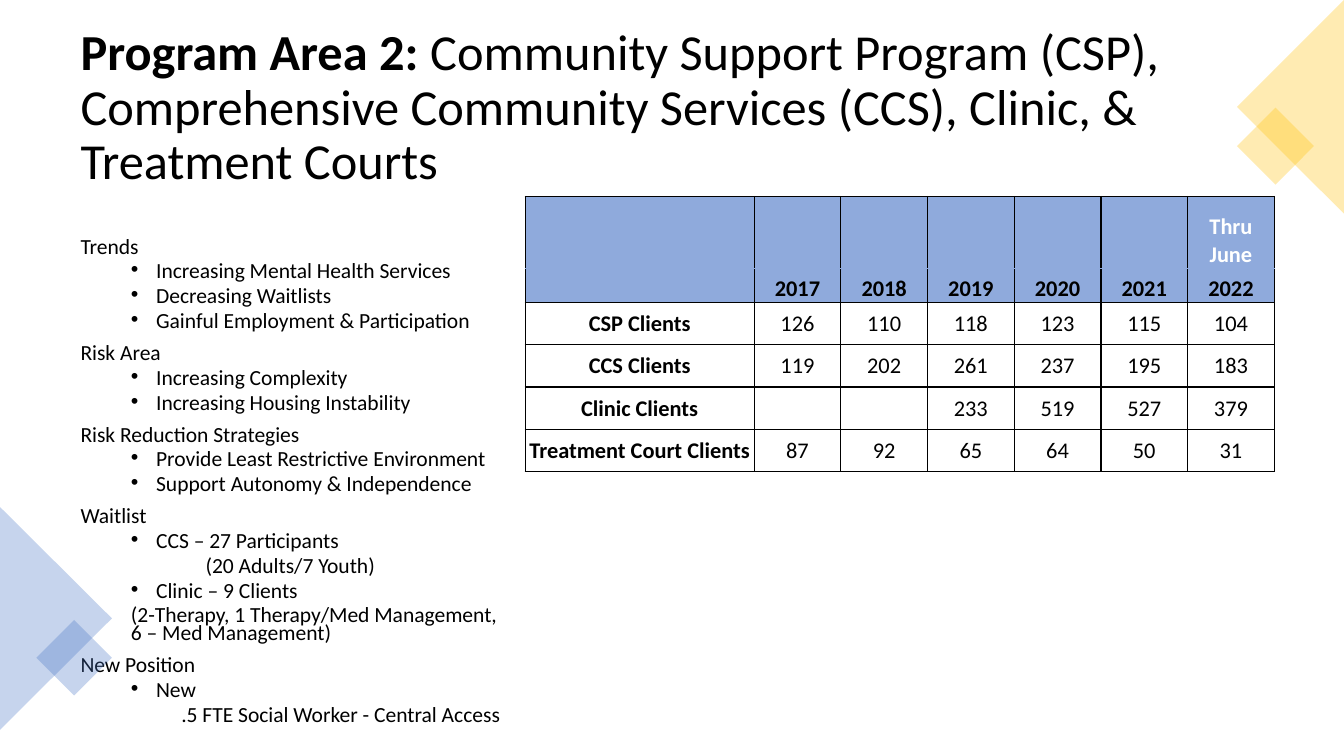
from dataclasses import dataclass

from lxml.etree import SubElement
from pptx import Presentation
from pptx.dml.color import RGBColor
from pptx.enum.shapes import MSO_SHAPE
from pptx.enum.text import MSO_ANCHOR, PP_ALIGN
from pptx.oxml.ns import qn
from pptx.util import Inches, Pt


@dataclass(frozen=True)
class Theme:
    font: str = "Calibri"
    black: str = "000000"
    white: str = "FFFFFF"
    blue: str = "4472C4"
    gold: str = "FFC000"
    header: str = "8FAADC"
    title_size: float = 36
    body_size: float = 15.4
    table_size: float = 16
    decoration_opacity: int = 30


# Outline styles: left margin, first-line indent, space before, bullet
OUTLINE_STYLES = {
    "heading": (0, 0, 10, False),
    "bullet": (0.75, -0.25, 5, True),
    "note": (0.5, 0, 5, False),
    "detail": (1, 0, 5, False),
    "aside": (1.24, 0, 5, False),
}

OUTLINE = [
    ("heading", "Trends"),
    ("bullet", "Increasing Mental Health Services"),
    ("bullet", "Decreasing Waitlists"),
    ("bullet", "Gainful Employment & Participation"),
    ("heading", "Risk Area"),
    ("bullet", "Increasing Complexity"),
    ("bullet", "Increasing Housing Instability"),
    ("heading", "Risk Reduction Strategies"),
    ("bullet", "Provide Least Restrictive Environment"),
    ("bullet", "Support Autonomy & Independence"),
    ("heading", "Waitlist"),
    ("bullet", "CCS – 27 Participants"),
    ("aside", "(20 Adults/7 Youth)"),
    ("bullet", "Clinic – 9 Clients"),
    ("note", "(2-Therapy, 1 Therapy/Med Management, 6 – Med Management)"),
    ("heading", "New Position"),
    ("bullet", "New"),
    ("detail", ".5 FTE Social Worker - Central Access"),
]

HEADER_ROWS = 2
CLIENT_ROWS = [
    ["", "", "", "", "", "", "Thru June"],
    ["", "2017", "2018", "2019", "2020", "2021", "2022"],
    ["CSP Clients", "126", "110", "118", "123", "115", "104"],
    ["CCS Clients", "119", "202", "261", "237", "195", "183"],
    ["Clinic Clients", "", "", "233", "519", "527", "379"],
    ["Treatment Court Clients", "87", "92", "65", "64", "50", "31"],
]
COLUMN_WIDTHS = [2.27] + [0.86] * 6
ROW_HEIGHTS = [0.71, 0.34] + [0.42] * 4


class SlideBuilder:
    def __init__(self, slide, theme):
        self.slide = slide
        self.theme = theme

    def style_font(self, font, size, color, bold=False):
        font.name = self.theme.font
        font.size = Pt(size)
        font.bold = bold
        font.color.rgb = RGBColor.from_string(color)

    def add_text_frame(self, left, top, width, height):
        box = self.slide.shapes.add_textbox(
            Inches(left), Inches(top), Inches(width), Inches(height))
        box.text_frame.word_wrap = True
        return box.text_frame

    def add_title(self, lead, rest, position):
        paragraph = self.add_text_frame(*position).paragraphs[0]
        paragraph.line_spacing = 0.9
        for text, bold in ((lead, True), (rest, False)):
            run = paragraph.add_run()
            run.text = text
            self.style_font(run.font, self.theme.title_size, self.theme.black, bold)

    def add_outline(self, items, position):
        text_frame = self.add_text_frame(*position)
        text_frame.text = "\n".join(text for _, text in items)
        for index, (style, _) in enumerate(items):
            paragraph = text_frame.paragraphs[index]
            margin, indent, space_before, bullet = OUTLINE_STYLES[style]
            paragraph.line_spacing = 0.69
            paragraph.space_before = Pt(space_before if index else 0)
            properties = paragraph._p.get_or_add_pPr()
            properties.set("marL", str(Inches(margin)))
            properties.set("indent", str(Inches(indent)))
            if bullet:
                SubElement(properties, qn("a:buFont"), typeface="Arial")
                SubElement(properties, qn("a:buChar"), char="•")
            self.style_font(paragraph.runs[0].font, self.theme.body_size, self.theme.black)

    def add_decoration(self, kind, position, rotation, color):
        """Add a rotated, translucent shape without an outline."""
        shape = self.slide.shapes.add_shape(kind, *(Inches(value) for value in position))
        shape.rotation = rotation
        shape.shadow.inherit = False
        shape.line.fill.background()
        shape.fill.solid()
        shape.fill.fore_color.rgb = RGBColor.from_string(color)
        color_element = shape.fill._xPr.find(qn("a:solidFill"))[0]
        SubElement(color_element, qn("a:alpha"),
                   val=str(self.theme.decoration_opacity * 1000))

    def set_borders(self, cell, top, bottom):
        """Draw black side borders and the given top and bottom colours."""
        properties = cell._tc.get_or_add_tcPr()
        black = self.theme.black
        for side, color in (("L", black), ("R", black), ("T", top), ("B", bottom)):
            line = SubElement(properties, qn(f"a:ln{side}"), w=str(Pt(1)))
            fill = SubElement(line, qn("a:solidFill"))
            SubElement(fill, qn("a:srgbClr"), val=color)

    def fill_cell(self, cell, row, column, text):
        theme = self.theme
        in_header = row < HEADER_ROWS
        self.set_borders(cell,
                         theme.header if row == 1 else theme.black,
                         theme.header if row == 0 else theme.black)
        if in_header:
            cell.fill.solid()
            cell.fill.fore_color.rgb = RGBColor.from_string(theme.header)
        else:
            cell.fill.background()
        cell.margin_left = cell.margin_right = cell.margin_top = Inches(0.01)
        cell.margin_bottom = Inches(0)
        cell.vertical_anchor = MSO_ANCHOR.BOTTOM if in_header else MSO_ANCHOR.MIDDLE
        cell.text_frame.text = text
        paragraph = cell.text_frame.paragraphs[0]
        paragraph.alignment = PP_ALIGN.CENTER
        color = theme.white if row == 0 else theme.black
        fonts = [run.font for run in paragraph.runs] or [paragraph.font]
        for font in fonts:
            self.style_font(font, theme.table_size, color, in_header or column == 0)

    def add_table(self, rows, left, top):
        table = self.slide.shapes.add_table(
            len(rows), len(COLUMN_WIDTHS), Inches(left), Inches(top),
            Inches(sum(COLUMN_WIDTHS)), Inches(sum(ROW_HEIGHTS))).table
        table.first_row = table.horz_banding = False
        for column, width in zip(table.columns, COLUMN_WIDTHS):
            column.width = Inches(width)
        for row, height in zip(table.rows, ROW_HEIGHTS):
            row.height = Inches(height)
        for row, values in enumerate(rows):
            for column, text in enumerate(values):
                self.fill_cell(table.cell(row, column), row, column, text)


def main():
    presentation = Presentation()
    presentation.slide_width = Inches(13.33)
    presentation.slide_height = Inches(7.5)
    theme = Theme()
    builder = SlideBuilder(
        presentation.slides.add_slide(presentation.slide_layouts[6]), theme)

    builder.add_title(
        "Program Area 2: ",
        "Community Support Program (CSP), Comprehensive Community Services (CCS), "
        "Clinic, & Treatment Courts",
        (0.7, 0.22, 12.02, 1.75))
    builder.add_outline(OUTLINE, (0.7, 2.33, 4.38, 4.84))

    triangle, square = MSO_SHAPE.ISOSCELES_TRIANGLE, MSO_SHAPE.RECTANGLE
    builder.add_decoration(triangle, (-0.55, 5.58, 2.21, 1.11), 90, theme.blue)
    builder.add_decoration(square, (0.47, 6.26, 0.53, 0.53), 45, theme.blue)
    builder.add_decoration(square, (12.38, 1.18, 0.54, 0.54), 45, theme.gold)
    builder.add_decoration(triangle, (11.74, 0.53, 2.12, 1.06), 270, theme.gold)

    builder.add_table(CLIENT_ROWS, 5.21, 1.95)
    presentation.save("out.pptx")


if __name__ == "__main__":
    main()
